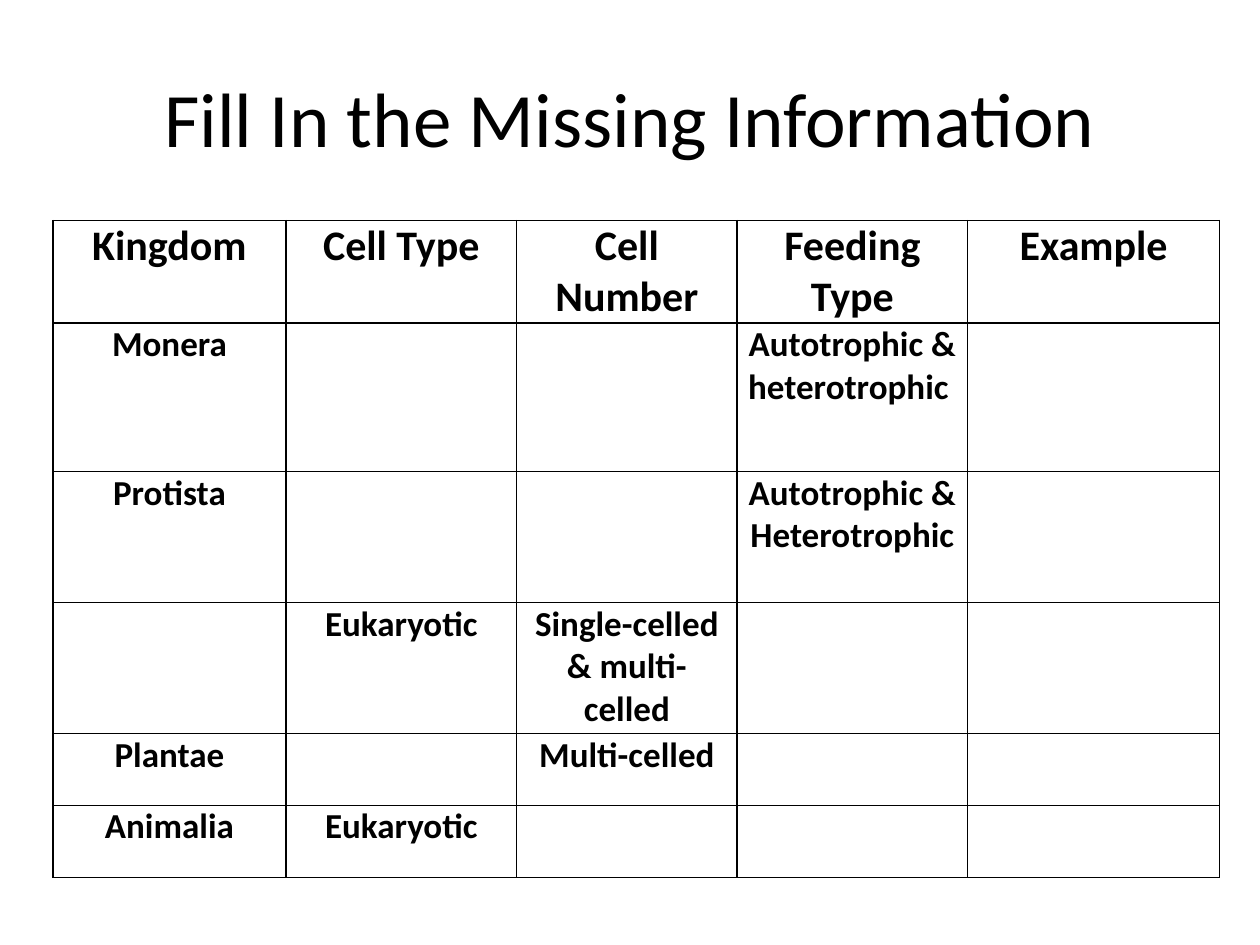
from lxml import etree
from pptx import Presentation
from pptx import util as u
from pptx.dml.color import RGBColor
from pptx.enum import text
from pptx.oxml import ns

FONT = "Calibri"
BLACK = "000000"
COLUMNS = [1.85, 1.83, 1.75, 1.83, 2]
ROWS = [0.76, 1.18, 1.04, 1.04, 0.57, 0.57]
KINGDOMS = [
    ["Kingdom", "Cell Type", "Cell Number", "Feeding Type", "Example"],
    ["Monera", "", "", "Autotrophic &\nheterotrophic ", ""],
    ["Protista", "", "", "Autotrophic &\nHeterotrophic", ""],
    ["", "Eukaryotic", "Single-celled & multi-celled", "", ""],
    ["Plantae", "", "Multi-celled", "", ""],
    ["Animalia", "Eukaryotic", "", "", ""],
]


def format_text(tf, size, bold=False):
    for p in tf.paragraphs:
        p.alignment = text.PP_ALIGN.CENTER
        p.font.name = FONT
        p.font.size = u.Pt(size)
        p.font.bold = bold
        p.font.color.rgb = RGBColor.from_string(BLACK)


def add_borders(cell, color, width):
    tcPr = cell._tc.get_or_add_tcPr()
    for side in ("lnL", "lnR", "lnT", "lnB"):
        ln = etree.SubElement(tcPr, ns.qn(f"a:{side}"), w=str(u.Pt(width)))
        fill = etree.SubElement(ln, ns.qn("a:solidFill"))
        etree.SubElement(fill, ns.qn("a:srgbClr"), val=color)


def add_title(s, wording):
    title = s.shapes.title
    title.left, title.top = u.Inches(0.5), u.Inches(0.3)
    title.width, title.height = u.Inches(9), u.Inches(1.25)
    title.text_frame.text = wording
    title.text_frame.vertical_anchor = text.MSO_ANCHOR.MIDDLE
    format_text(title.text_frame, 44)


def fill_cell(cell, wording, size):
    cell.margin_left = cell.margin_right = u.Inches(0.07)
    cell.margin_top = cell.margin_bottom = 0
    cell.text_frame.text = wording
    format_text(cell.text_frame, size, bold=True)
    add_borders(cell, BLACK, 1)
    cell.fill.background()


def add_kingdom_table(s, left, top):
    frame = s.shapes.add_table(
        len(ROWS), len(COLUMNS), u.Inches(left), u.Inches(top),
        u.Inches(sum(COLUMNS)), u.Inches(sum(ROWS)))
    table = frame.table
    table.first_row = table.horz_banding = False
    for column, width in zip(table.columns, COLUMNS):
        column.width = u.Inches(width)
    for i, (row, height) in enumerate(zip(table.rows, ROWS)):
        row.height = u.Inches(height)
        for cell, wording in zip(row.cells, KINGDOMS[i]):
            fill_cell(cell, wording, 20 if i else 24)


def main():
    prs = Presentation()
    prs.slide_width, prs.slide_height = u.Inches(10), u.Inches(7.5)
    s = prs.slides.add_slide(prs.slide_layouts[5])
    add_title(s, "Fill In the Missing Information")
    add_kingdom_table(s, 0.42, 1.75)
    prs.save("out.pptx")


if __name__ == "__main__":
    main()
